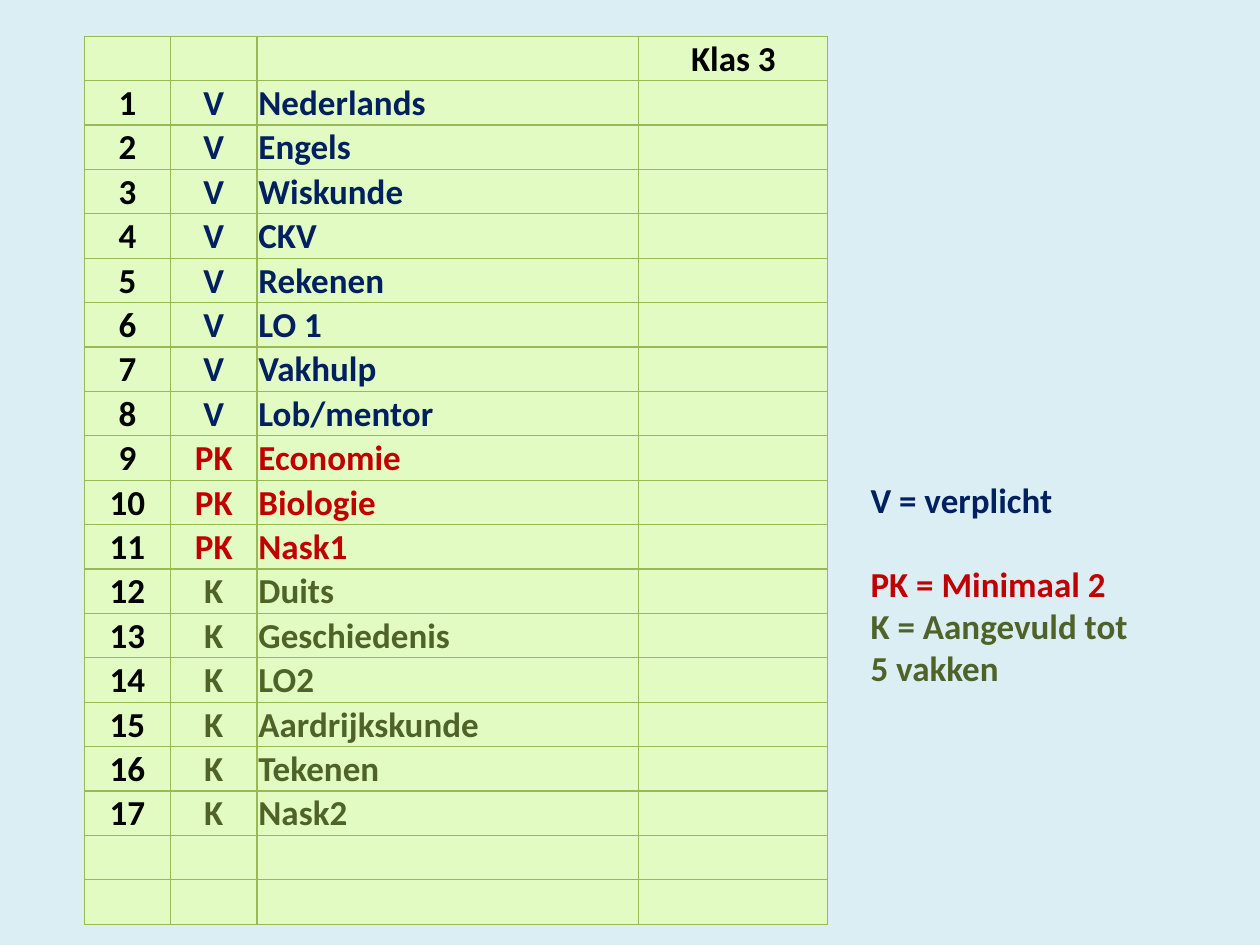
from lxml import etree
from pptx import Presentation
from pptx.dml.color import RGBColor
from pptx.enum.text import MSO_ANCHOR, PP_ALIGN
from pptx.oxml.ns import qn
from pptx.util import Cm, Pt

CENTER, LEFT = PP_ALIGN.CENTER, PP_ALIGN.LEFT
BOTTOM = MSO_ANCHOR.BOTTOM

PALE_BLUE = RGBColor(0xDB, 0xEE, 0xF4)
PALE_GREEN = RGBColor(0xE2, 0xFB, 0xC2)
GRID_GREEN = RGBColor(0x98, 0xB9, 0x55)
BLACK = RGBColor(0, 0, 0)
NAVY = RGBColor(0x00, 0x20, 0x60)
RED = RGBColor(0xC0, 0x00, 0x00)
OLIVE = RGBColor(0x4F, 0x62, 0x28)

KIND_COLORS = {"V": NAVY, "PK": RED, "K": OLIVE}
SUBJECTS = {
    "V": ["Nederlands", "Engels", "Wiskunde", "CKV", "Rekenen", "LO 1",
          "Vakhulp", "Lob/mentor"],
    "PK": ["Economie", "Biologie", "Nask1"],
    "K": ["Duits", "Geschiedenis", "LO2", "Aardrijkskunde", "Tekenen", "Nask2"],
}
LEGEND = [
    (["V = verplicht"], NAVY, 0),
    (["PK = Minimaal 2"], RED, 24),
    (["K = Aangevuld tot", "5 vakken"], OLIVE, 0),
]
COLUMN_WIDTHS = [1.74, 1.74, 7.7, 3.81]
ROW_HEIGHT = 0.88
SPARE_ROWS = 2


class SubjectSlide:
    font_name = "Calibri"
    font_size = Pt(20)
    border_width = Pt(0.75)

    def __init__(self, presentation):
        self.slide = presentation.slides.add_slide(presentation.slide_layouts[6])
        background = self.slide.background.fill
        background.solid()
        background.fore_color.rgb = PALE_BLUE

    def style(self, paragraph, color, alignment=LEFT):
        paragraph.alignment = alignment
        font = paragraph.font
        font.name, font.size, font.bold = self.font_name, self.font_size, True
        font.color.rgb = color

    def border(self, cell):
        properties = cell._tc.get_or_add_tcPr()
        for position, side in enumerate(("a:lnL", "a:lnR", "a:lnT", "a:lnB")):
            line = etree.Element(qn(side), w=str(self.border_width))
            fill = etree.SubElement(line, qn("a:solidFill"))
            etree.SubElement(fill, qn("a:srgbClr"), val=str(GRID_GREEN))
            properties.insert(position, line)

    def cell(self, cell, text, color, alignment):
        cell.margin_left = cell.margin_right = cell.margin_top = Cm(0.03)
        cell.margin_bottom = 0
        cell.vertical_anchor = BOTTOM
        cell.fill.solid()
        cell.fill.fore_color.rgb = PALE_GREEN
        self.border(cell)
        cell.text = text
        self.style(cell.text_frame.paragraphs[0], color, alignment)

    def table(self, left, top, rows):
        frame = self.slide.shapes.add_table(
            len(rows), len(COLUMN_WIDTHS), Cm(left), Cm(top),
            Cm(sum(COLUMN_WIDTHS)), Cm(ROW_HEIGHT * len(rows)))
        table = frame.table
        for column, width in zip(table.columns, COLUMN_WIDTHS):
            column.width = Cm(width)
        for row, (texts, kind_color) in zip(table.rows, rows):
            row.height = Cm(ROW_HEIGHT)
            colors = [BLACK, kind_color, kind_color, BLACK]
            alignments = [CENTER, CENTER, LEFT, CENTER]
            for content in zip(row.cells, texts, colors, alignments):
                self.cell(*content)

    def legend(self, left, top, width, height, entries):
        box = self.slide.shapes.add_textbox(Cm(left), Cm(top), Cm(width), Cm(height))
        text_frame = box.text_frame
        text_frame.word_wrap = True
        for index, (lines, color, space_before) in enumerate(entries):
            paragraph = text_frame.add_paragraph() if index else text_frame.paragraphs[0]
            for number, line in enumerate(lines):
                if number:
                    paragraph.add_line_break()
                paragraph.add_run().text = line
            paragraph.space_before = Pt(space_before)
            self.style(paragraph, color)


def subject_rows():
    subjects = [(kind, name) for kind, names in SUBJECTS.items() for name in names]
    rows = [(["", "", "", "Klas 3"], BLACK)]
    for number, (kind, name) in enumerate(subjects, 1):
        rows.append(([str(number), kind, name, ""], KIND_COLORS[kind]))
    return rows + [([""] * len(COLUMN_WIDTHS), BLACK)] * SPARE_ROWS


def main():
    presentation = Presentation()
    presentation.slide_width, presentation.slide_height = Cm(25.4), Cm(19.05)
    overview = SubjectSlide(presentation)
    overview.table(1.7, 0.73, subject_rows())
    overview.legend(17.3, 9.53, 6.9, 6.25, LEGEND)
    presentation.save("out.pptx")


if __name__ == "__main__":
    main()
